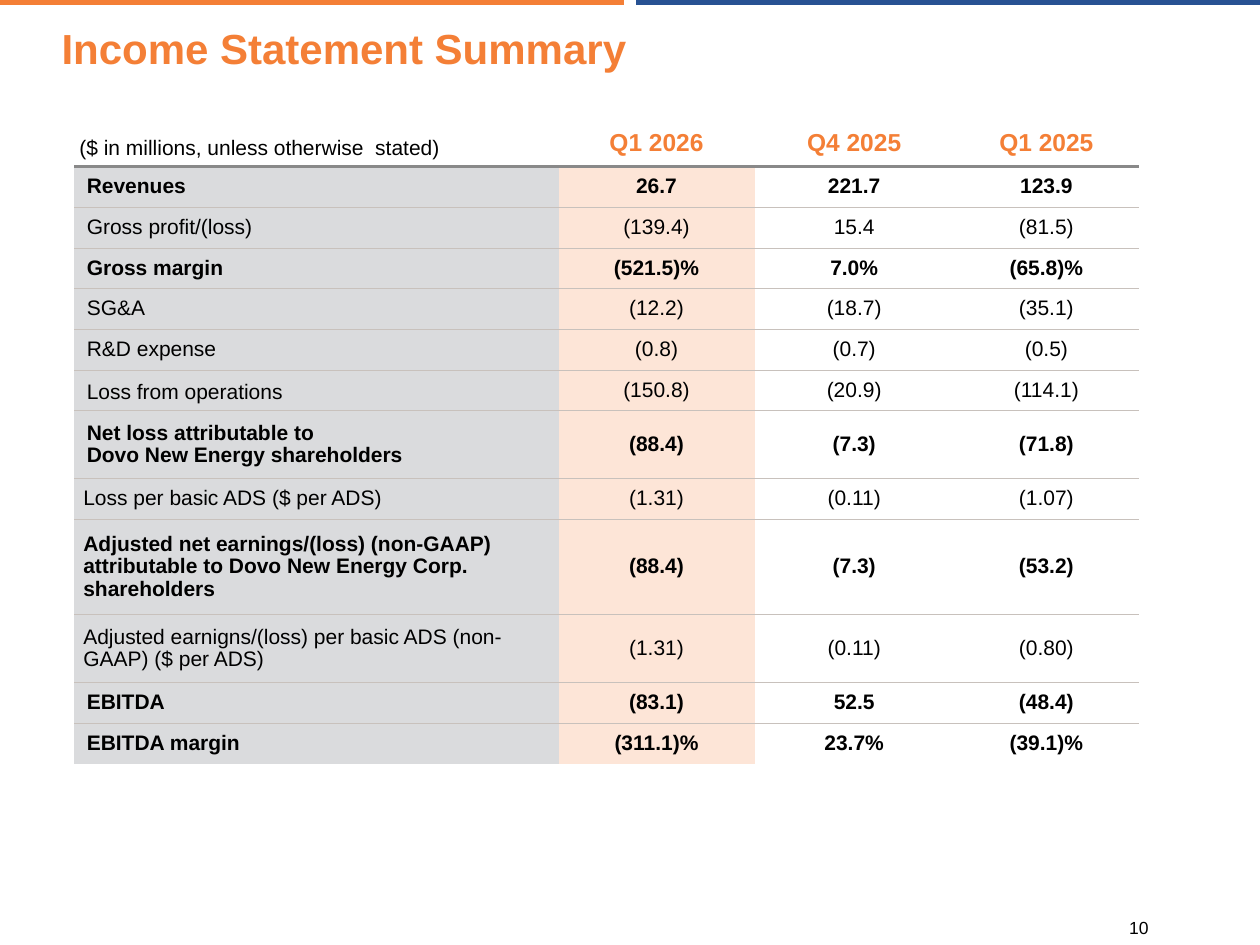
import pptx
import pptx.dml.color
import pptx.enum.shapes
import pptx.enum.text
import pptx.oxml
import pptx.oxml.ns
import pptx.util
from pptx.util import Cm

ALIGN = pptx.enum.text.PP_ALIGN
ANCHOR = pptx.enum.text.MSO_ANCHOR
ORANGE, BLUE, BLACK = "F47F36", "285293", "000000"
COLUMN_FILLS = ["DADBDD", "FDE5D7", None, "FFFFFF"]
COLUMN_WIDTHS = [9.76, 3.95, 4.02, 3.73]
HEADER_RULE, ROW_RULE = ("898989", 2.25), ("C8C1BC", 0.5)
HEADER = ["($ in millions, unless otherwise  stated)", "Q1 2026", "Q4 2025", "Q1 2025"]
ROW_HEIGHTS = {1: 0.82, 2: 1.37, 3: 1.92}
WIDE, NARROW = (0.25, 0.13), (0.18, 0.13)

# Each row: label, values, bold, lines of label, label margins
ROWS = [
    ("Revenues", ["26.7", "221.7", "123.9"], True, 1, WIDE),
    ("Gross profit/(loss)", ["(139.4)", "15.4", "(81.5)"], False, 1, WIDE),
    ("Gross margin", ["(521.5)%", "7.0%", "(65.8)%"], True, 1, WIDE),
    ("SG&A", ["(12.2)", "(18.7)", "(35.1)"], False, 1, WIDE),
    ("R&D expense", ["(0.8)", "(0.7)", "(0.5)"], False, 1, WIDE),
    ("Loss from operations", ["(150.8)", "(20.9)", "(114.1)"], False, 1, WIDE),
    ("Net loss attributable to\nDovo New Energy shareholders",
     ["(88.4)", "(7.3)", "(71.8)"], True, 2, WIDE),
    ("Loss per basic ADS ($ per ADS)", ["(1.31)", "(0.11)", "(1.07)"], False, 1, NARROW),
    ("Adjusted net earnings/(loss) (non-GAAP) attributable to Dovo New Energy Corp. shareholders",
     ["(88.4)", "(7.3)", "(53.2)"], True, 3, NARROW),
    ("Adjusted earnigns/(loss) per basic ADS (non-GAAP) ($ per ADS)",
     ["(1.31)", "(0.11)", "(0.80)"], False, 2, NARROW),
    ("EBITDA", ["(83.1)", "52.5", "(48.4)"], True, 1, WIDE),
    ("EBITDA margin", ["(311.1)%", "23.7%", "(39.1)%"], True, 1, WIDE),
]


def color(value):
    """Turn a hex string into a colour."""
    return pptx.dml.color.RGBColor.from_string(value)


def write(frame, text, size=12, ink=BLACK, bold=False, align=ALIGN.LEFT, spacing=None):
    """Put formatted text into a text frame, one paragraph per line."""
    frame.text = text
    frame.word_wrap = True
    for para in frame.paragraphs:
        para.alignment = align
        para.line_spacing = spacing
        for span in para.runs:
            span.font.name = "Arial"
            span.font.size = pptx.util.Pt(size)
            span.font.bold = bold
            span.font.color.rgb = color(ink)


def set_margins(area, across, down):
    """Set the side and the top and bottom margins of a cell or text frame."""
    area.margin_left = area.margin_right = Cm(across)
    area.margin_top = area.margin_bottom = Cm(down)


def add_stripe(page, start, end, ink):
    """Draw one horizontal stripe at the top of the page."""
    stripe = page.shapes.add_connector(
        pptx.enum.shapes.MSO_CONNECTOR.STRAIGHT, Cm(start), Cm(0.05), Cm(end), Cm(0.05))
    stripe.line.color.rgb = color(ink)
    stripe.line.width = pptx.util.Pt(3)
    properties = stripe._element.spPr
    properties.append(pptx.oxml.parse_xml(f'<a:effectLst {pptx.oxml.ns.nsdecls("a")}/>'))


def set_borders(cell, top, bottom):
    """Give a cell its top and bottom rules and clear its sides."""
    properties = cell._tc.get_or_add_tcPr()
    sides = [("lnL", None), ("lnR", None), ("lnT", top), ("lnB", bottom)]
    for position, (tag, rule) in enumerate(sides):
        width, paint = 0, "<a:noFill/>"
        if rule:
            width = pptx.util.Pt(rule[1])
            paint = f'<a:solidFill><a:srgbClr val="{rule[0]}"/></a:solidFill>'
        border = f'<a:{tag} {pptx.oxml.ns.nsdecls("a")} w="{width}">{paint}</a:{tag}>'
        properties.insert(position, pptx.oxml.parse_xml(border))


def format_cell(cell, text, margins, fill=None, top=None, bottom=None,
                anchor=ANCHOR.MIDDLE, **style):
    """Fill one table cell with text, background and rules."""
    write(cell.text_frame, text, **style)
    set_margins(cell, *margins)
    cell.vertical_anchor = anchor
    if fill:
        cell.fill.solid()
        cell.fill.fore_color.rgb = color(fill)
    else:
        cell.fill.background()
    set_borders(cell, top, bottom)


def add_statement(page):
    """Build the income statement table."""
    heights = [0.92] + [ROW_HEIGHTS[row[3]] for row in ROWS]
    table = page.shapes.add_table(
        len(heights), len(HEADER), Cm(1.5), Cm(2.44),
        Cm(sum(COLUMN_WIDTHS)), Cm(sum(heights))).table
    table.first_row = table.horz_banding = False
    for column, width in zip(table.columns, COLUMN_WIDTHS):
        column.width = Cm(width)
    for row, height in zip(table.rows, heights):
        row.height = Cm(height)

    format_cell(table.cell(0, 0), HEADER[0], (0.1, 0.13), bottom=HEADER_RULE,
                anchor=ANCHOR.BOTTOM)
    for column, quarter in enumerate(HEADER[1:], 1):
        format_cell(table.cell(0, column), quarter, WIDE, bottom=HEADER_RULE, size=14,
                    ink=ORANGE, bold=True, align=ALIGN.CENTER, spacing=0.95)

    for index, (label, values, bold, lines, margins) in enumerate(ROWS, 1):
        rules = {"top": HEADER_RULE if index == 1 else ROW_RULE,
                 "bottom": ROW_RULE if index < len(ROWS) else None}
        at_bottom = label == "Loss from operations"
        format_cell(table.cell(index, 0), label, margins, COLUMN_FILLS[0], bold=bold,
                    anchor=ANCHOR.BOTTOM if at_bottom else ANCHOR.MIDDLE,
                    spacing=None if at_bottom else 0.95, **rules)
        for column, value in enumerate(values, 1):
            format_cell(table.cell(index, column), value, (0.18, 0), COLUMN_FILLS[column],
                        bold=bold, align=ALIGN.CENTER, spacing=0.95, **rules)


def add_title(page, text):
    """Place the title in its placeholder."""
    title = page.shapes.title
    title.left, title.top, title.width, title.height = Cm(1.24), Cm(0.53), Cm(22.91), Cm(0.96)
    write(title.text_frame, text, size=24, ink=ORANGE, bold=True, spacing=0.95)
    set_margins(title.text_frame, 0, 0)
    title.text_frame.vertical_anchor = ANCHOR.MIDDLE


def add_page_number(page, number):
    """Write the page number in the lower right corner."""
    box = page.shapes.add_textbox(Cm(20.52), Cm(18.06), Cm(4.88), Cm(0.99))
    write(box.text_frame, number, size=10, align=ALIGN.CENTER)
    set_margins(box.text_frame, 0, 0.13)
    box.text_frame.vertical_anchor = ANCHOR.BOTTOM


def main():
    """Build and save the deck."""
    deck = pptx.Presentation()
    deck.slide_width, deck.slide_height = Cm(25.4), Cm(19.05)
    page = deck.slides.add_slide(deck.slide_layouts[5])
    add_stripe(page, 0, 12.57, ORANGE)
    add_stripe(page, 12.83, 25.4, BLUE)
    add_title(page, "Income Statement Summary")
    add_statement(page)
    add_page_number(page, "10")
    deck.save("out.pptx")


if __name__ == "__main__":
    main()
